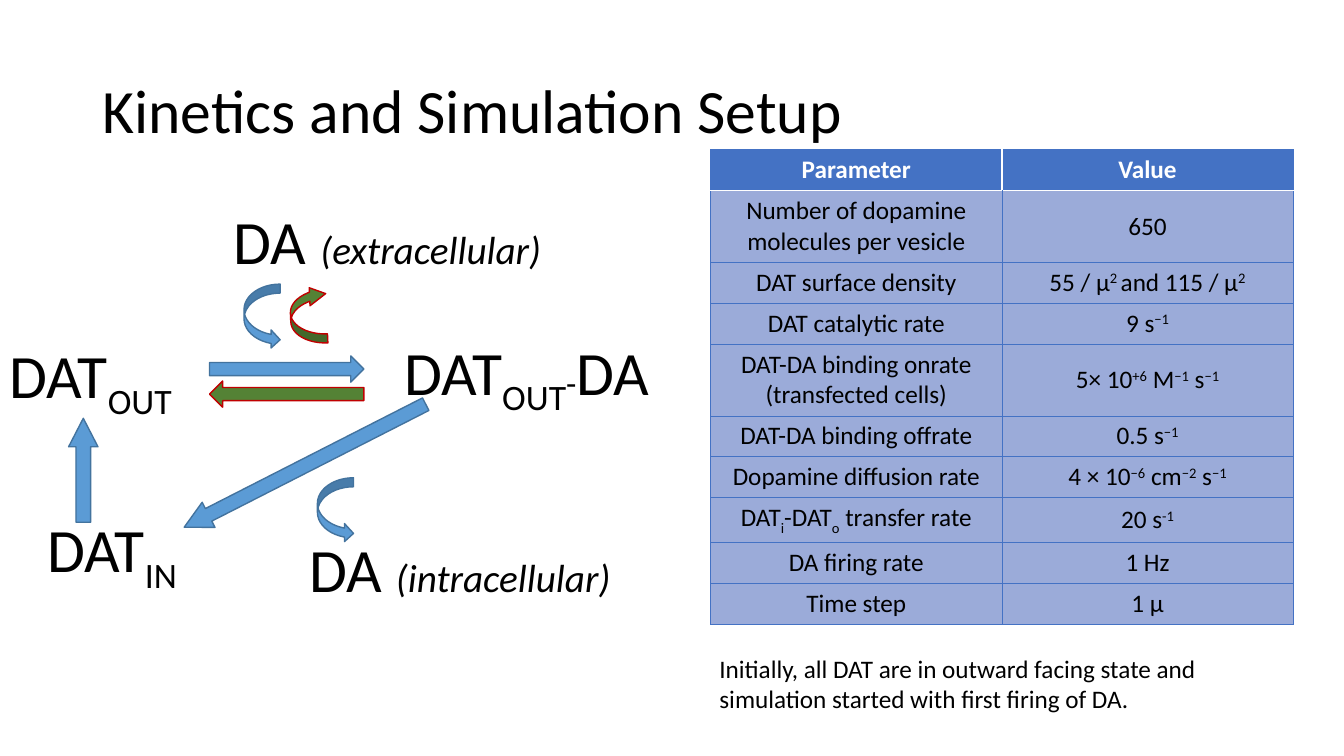
from lxml import etree
from pptx import Presentation
from pptx.dml.color import RGBColor
from pptx.enum.shapes import MSO_SHAPE
from pptx.enum.text import MSO_ANCHOR, PP_ALIGN
from pptx.oxml.ns import qn
from pptx.util import Cm, Pt

LEFT, CENTER = PP_ALIGN.LEFT, PP_ALIGN.CENTER
TOP, MIDDLE = MSO_ANCHOR.TOP, MSO_ANCHOR.MIDDLE
STRAIGHT = MSO_SHAPE.RIGHT_ARROW
CURVED_RIGHT, CURVED_LEFT = MSO_SHAPE.CURVED_RIGHT_ARROW, MSO_SHAPE.CURVED_LEFT_ARROW

TITLE = "Kinetics and Simulation Setup"
NOTE = ("Initially, all DAT are in outward facing state and "
        "simulation started with first firing of DA.")
RATES = [
    ("Parameter", "Value"),
    ("Number of dopamine molecules per vesicle", "650"),
    ("DAT surface density", "55 / μ|^2 |and 115 / μ|^2"),
    ("DAT catalytic rate", "9 s|^−1"),
    ("DAT-DA binding onrate (transfected cells)", "5× 10|^+6| M|^−1| s|^−1"),
    ("DAT-DA binding offrate", "0.5 s|^−1"),
    ("Dopamine diffusion rate", "4 × 10|^−6| cm|^−2| s|^−1"),
    ("DAT|_i|-DAT|_o| transfer rate", "20 s|^-1"),
    ("DA firing rate", "1 Hz"),
    ("Time step", "1 μ"),
]
STATES = [
    ("DAT|_OUT", LEFT, (0, 7.9, 12.55, 3.15)),
    ("DAT|_OUT|<-|DA", CENTER, (9.58, 7.82, 7.39, 3.15)),
    ("DA |~(extracellular)", CENTER, (3.58, 4.6, 12.37, 3.15)),
    ("DAT|_IN", CENTER, (-3.45, 12.29, 12.55, 3.15)),
    ("DA |~(intracellular)", CENTER, (4.67, 12.85, 13.84, 3.15)),
]
FORWARD, REVERSE = ("5B9BD5", "43739E"), ("548235", "C00000")
LONG_HEAD = (0.5, 0.97)
ARROWS = [
    (CURVED_RIGHT, FORWARD, (6.15, 7.16, 0.91, 1.63), 0, ()),
    (CURVED_RIGHT, FORWARD, (8, 12.04, 0.91, 1.63), 0, ()),
    (STRAIGHT, FORWARD, (5.28, 8.97, 3.89, 0.66), 0, ()),
    (STRAIGHT, REVERSE, (5.28, 9.6, 3.89, 0.66), 180, ()),
    (STRAIGHT, FORWARD, (4.27, 11.38, 6.83, 0.71), 153, LONG_HEAD),
    (STRAIGHT, FORWARD, (0.79, 11.48, 2.62, 0.74), 270, LONG_HEAD),
    (CURVED_LEFT, REVERSE, (7.32, 7.19, 0.91, 1.47), 177.4, (0.25, 0.5, 0.448)),
]
MARKS = {"^": {"baseline": "30000"}, "_": {"baseline": "-25000"},
         "~": {"sz": "2800", "i": "1"}, "<": {"sz": "2400"}}
BLUE, PALE, WHITE, BLACK = "4472C4", "9BABD9", "FFFFFF", "000000"
LINE_ROW, SUBSCRIPT_ROW, DOUBLE_ROW = 1.03, 1.13, 1.81


def color(hex_text):
    return RGBColor.from_string(hex_text)


def box(lengths):
    return [Cm(length) for length in lengths]


def write(frame, marked, size, align, ink=BLACK, bold=False, spacing=1.0):
    paragraph = frame.paragraphs[0]
    for name, value in {"alignment": align, "line_spacing": spacing}.items():
        setattr(paragraph, name, value)
    for part in marked.split("|"):
        mark = MARKS.get(part[0], {})
        run = paragraph.add_run()
        run.text = part[1:] if mark else part
        for name, value in {"name": "Calibri", "size": Pt(size), "bold": bold}.items():
            setattr(run.font, name, value)
        run.font.color.rgb = color(ink)
        for name, value in mark.items():
            run._r.get_or_add_rPr().set(name, value)


def add_text(marked, place, size, align, anchor, spacing=1.0):
    frame = slide.shapes.add_textbox(*box(place)).text_frame
    for name, value in {"word_wrap": True, "vertical_anchor": anchor}.items():
        setattr(frame, name, value)
    write(frame, marked, size, align, spacing=spacing)


def add_border(cell, side, ink, width):
    line = etree.SubElement(cell._tc.get_or_add_tcPr(), qn("a:ln" + side), w=str(Pt(width)))
    fill = etree.SubElement(line, qn("a:solidFill"))
    etree.SubElement(fill, qn("a:srgbClr"), val=ink)


def row_height(parameter):
    if "_" in parameter:
        return SUBSCRIPT_ROW
    return DOUBLE_ROW if len(parameter) > 30 else LINE_ROW


deck = Presentation()
deck.slide_width, deck.slide_height = Cm(33.87), Cm(19.05)
slide = deck.slides.add_slide(deck.slide_layouts[5])

title = slide.shapes.title
title.left, title.top, title.width, title.height = box((2.33, 1.02, 29.21, 3.68))
title.text_frame.vertical_anchor = MIDDLE
write(title.text_frame, TITLE, 44, LEFT, spacing=0.9)

for state, align, place in STATES:
    add_text(state, place, 44, align, MIDDLE, 0.9)

for kind, (fill, edge), place, turn, bends in ARROWS:
    arrow = slide.shapes.add_shape(kind, *box(place))
    arrow.rotation = turn
    for index, bend in enumerate(bends):
        arrow.adjustments[index] = bend
    arrow.shadow.inherit = False
    arrow.fill.solid()
    arrow.fill.fore_color.rgb = color(fill)
    arrow.line.color.rgb = color(edge)
    arrow.line.width = Pt(1)

heights = [row_height(parameter) for parameter, value in RATES]
rates = slide.shapes.add_table(len(RATES), 2, *box((17.91, 3.77, 14.68, sum(heights)))).table
for column in rates.columns:
    column.width = Cm(7.34)
for r, (row, height) in enumerate(zip(RATES, heights)):
    rates.rows[r].height = Cm(height)
    header = r == 0
    for c, marked in enumerate(row):
        cell = rates.cell(r, c)
        cell.vertical_anchor = MIDDLE
        for side in "LRTB":
            under_header = (r, side) in ((0, "B"), (1, "T"))
            between_headers = header and side == "RL"[c]
            if not between_headers:
                add_border(cell, side, *((WHITE, 1) if under_header else (BLUE, 0.5)))
        cell.fill.solid()
        cell.fill.fore_color.rgb = color(BLUE if header else PALE)
        write(cell.text_frame, marked, 18, CENTER, WHITE if header else BLACK, header)

add_text(NOTE, (17.88, 16.33, 15.14, 1.8), 18, LEFT, TOP)

deck.save("out.pptx")
